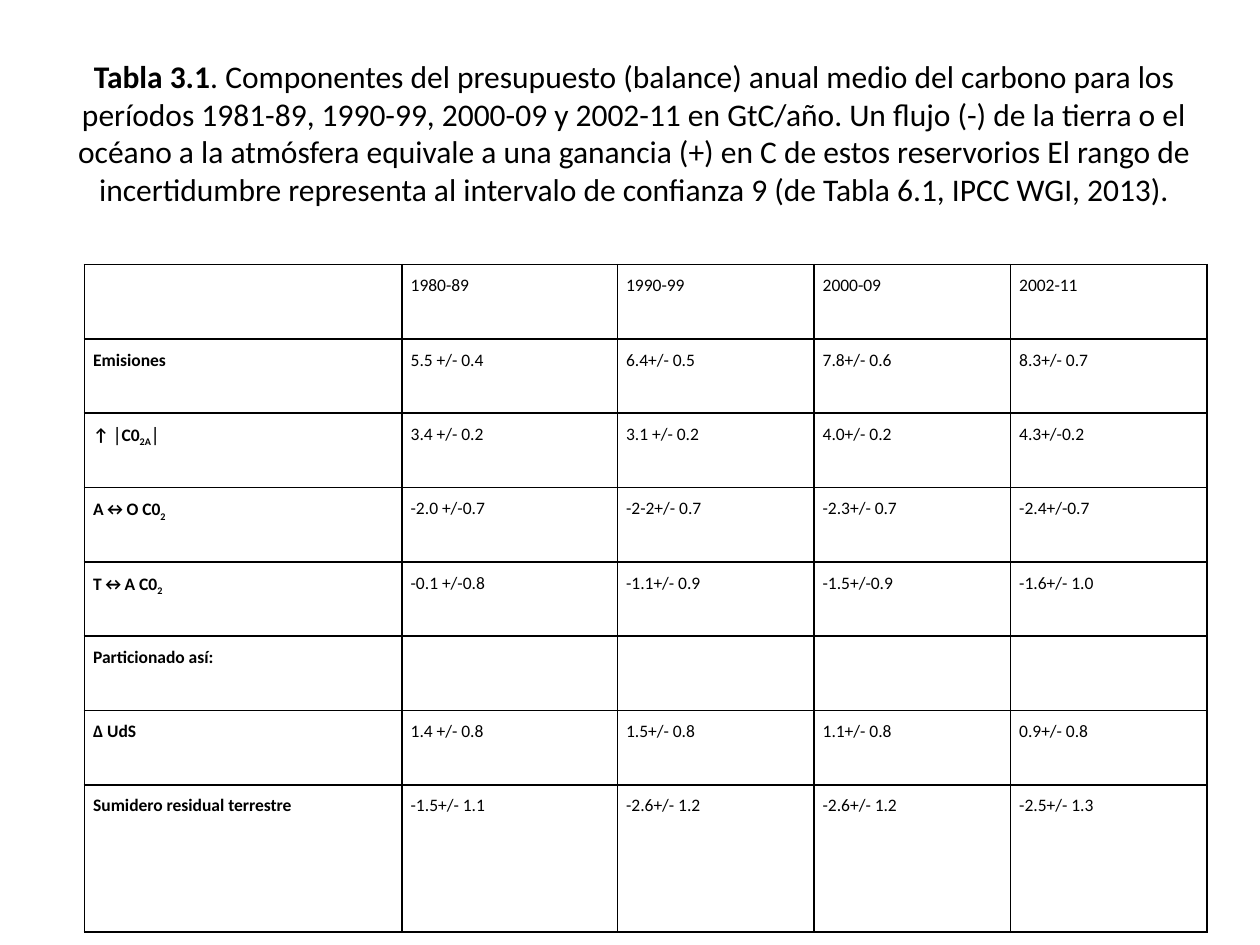
from dataclasses import dataclass

from lxml.etree import SubElement
from pptx import Presentation
from pptx.dml.color import RGBColor
from pptx.enum.text import MSO_ANCHOR, MSO_AUTO_SIZE, PP_ALIGN
from pptx.oxml.ns import qn
from pptx.util import Inches, Pt


@dataclass(frozen=True)
class Theme:
    font: str = "Calibri"
    ink: RGBColor = RGBColor(0, 0, 0)
    paper: RGBColor = RGBColor(255, 255, 255)
    title_size: int = 18
    table_size: int = 10
    border_width: int = 1
    line_spacing: float = 1.5


CAPTION = [
    ("Tabla 3.1", True),
    (". Componentes del presupuesto (balance) anual medio del carbono para los "
     "períodos 1981-89, 1990-99, 2000-09 y 2002-11 en GtC/año. Un flujo (-) de la "
     "tierra o el océano a la atmósfera equivale a una ganancia (+) en C de estos "
     "reservorios El rango de incertidumbre representa al intervalo de confianza 9 "
     "(de Tabla 6.1, IPCC WGI, 2013).", False),
]

# In a row label, the second part of a tuple is set as subscript.
BUDGET = [
    ("", "1980-89", "1990-99", "2000-09", "2002-11"),
    ("Emisiones", "5.5 +/- 0.4", "6.4+/- 0.5", "7.8+/- 0.6", "8.3+/- 0.7"),
    (("↑ │C0", "2A", "│"), "3.4 +/- 0.2", "3.1 +/- 0.2", "4.0+/- 0.2", "4.3+/-0.2"),
    (("A↔O C0", "2"), "-2.0 +/-0.7", "-2-2+/- 0.7", "-2.3+/- 0.7", "-2.4+/-0.7"),
    (("T↔A C0", "2"), "-0.1 +/-0.8", "-1.1+/- 0.9", "-1.5+/-0.9", "-1.6+/- 1.0"),
    ("Particionado así:", "", "", "", ""),
    ("∆ UdS", "1.4 +/- 0.8", "1.5+/- 0.8", "1.1+/- 0.8", "0.9+/- 0.8"),
    ("Sumidero residual terrestre", "-1.5+/- 1.1", "-2.6+/- 1.2", "-2.6+/- 1.2",
     "-2.5+/- 1.3"),
]
COLUMN_WIDTHS = [2.52, 1.71, 1.56, 1.56, 1.56]
ROW_HEIGHTS = [0.59] * 7 + [1.17]


class SlideBuilder:
    def __init__(self, slide, theme):
        self.slide = slide
        self.theme = theme

    def add_run(self, paragraph, text, size, bold=False):
        run = paragraph.add_run()
        run.text = text
        run.font.name = self.theme.font
        run.font.size = Pt(size)
        run.font.bold = bold
        run.font.color.rgb = self.theme.ink
        return run

    def title(self, parts, left, top, width, height):
        caption = self.slide.shapes.title
        caption.left, caption.top = Inches(left), Inches(top)
        caption.width, caption.height = Inches(width), Inches(height)
        frame = caption.text_frame
        frame.word_wrap = True
        frame.auto_size = MSO_AUTO_SIZE.NONE
        frame.vertical_anchor = MSO_ANCHOR.TOP
        frame.margin_top = Inches(0.15)
        paragraph = frame.paragraphs[0]
        paragraph.alignment = PP_ALIGN.CENTER
        for text, bold in parts:
            self.add_run(paragraph, text, self.theme.title_size, bold)

    def table(self, rows, widths, heights, left, top):
        table = self.slide.shapes.add_table(
            len(rows), len(widths), Inches(left), Inches(top),
            Inches(sum(widths)), Inches(sum(heights))).table
        table.first_row = table.horz_banding = False
        for column, width in zip(table.columns, widths):
            column.width = Inches(width)
        for row, height, contents in zip(table.rows, heights, rows):
            row.height = Inches(height)
            for index, (cell, content) in enumerate(zip(row.cells, contents)):
                self.fill_cell(cell, content, is_label=index == 0)

    def fill_cell(self, cell, content, is_label):
        cell.margin_left = cell.margin_right = Inches(0.07)
        cell.margin_top = cell.margin_bottom = 0
        self.border(cell)
        cell.fill.solid()
        cell.fill.fore_color.rgb = self.theme.paper
        if not content:
            return
        paragraph = cell.text_frame.paragraphs[0]
        paragraph.line_spacing = self.theme.line_spacing
        parts = (content,) if isinstance(content, str) else content
        for index, text in enumerate(parts):
            run = self.add_run(paragraph, text, self.theme.table_size, is_label)
            if index == 1:
                run.font._element.set("baseline", "-25000")

    def border(self, cell):
        properties = cell._tc.get_or_add_tcPr()
        for side in ("lnL", "lnR", "lnT", "lnB"):
            line = SubElement(properties, qn(f"a:{side}"),
                              w=str(Pt(self.theme.border_width)))
            fill = SubElement(line, qn("a:solidFill"))
            SubElement(fill, qn("a:srgbClr"), val=str(self.theme.ink))


def main():
    deck = Presentation()
    deck.slide_width, deck.slide_height = Inches(10), Inches(7.5)
    title_only = deck.slide_layouts[5]
    builder = SlideBuilder(deck.slides.add_slide(title_only), Theme())
    builder.title(CAPTION, 0.35, 0.3, 9.37, 1.25)
    builder.table(BUDGET, COLUMN_WIDTHS, ROW_HEIGHTS, 0.67, 2.1)
    deck.save("out.pptx")


if __name__ == "__main__":
    main()
